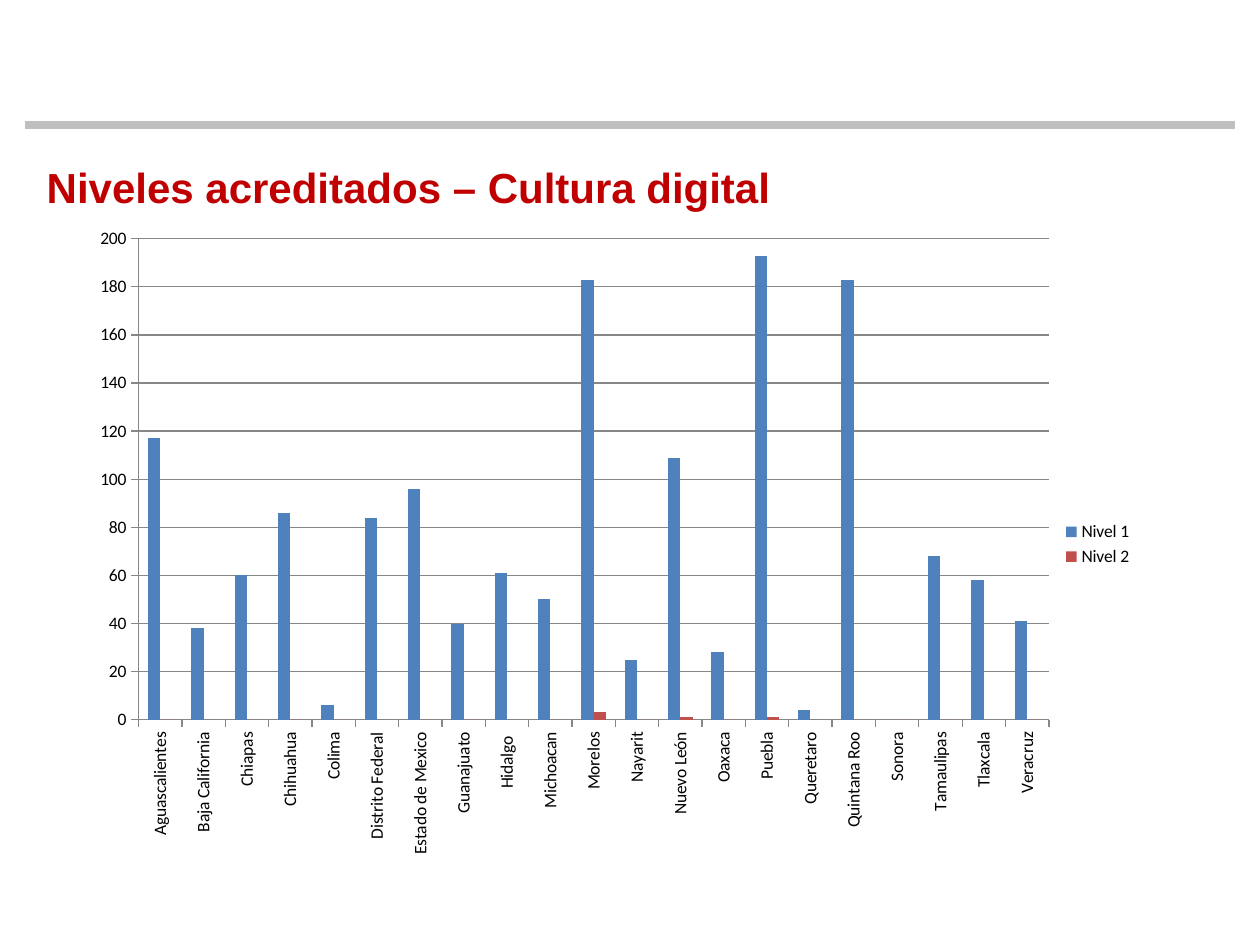
import pptx
import pptx.chart.data
import pptx.dml.color
import pptx.enum.chart
import pptx.enum.text
import pptx.oxml
import pptx.util
from pptx.oxml.ns import qn

Pt = pptx.util.Pt
RGBColor = pptx.dml.color.RGBColor

RED = RGBColor(0xC0, 0x00, 0x00)
RULE_GRAY = RGBColor(0xBF, 0xBF, 0xBF)
AXIS_GRAY = RGBColor(0x87, 0x87, 0x87)
BLACK = RGBColor(0x00, 0x00, 0x00)
LEVEL_COLORS = (RGBColor(0x4F, 0x81, 0xBD), RGBColor(0xC0, 0x50, 0x4D))

HEADING = "Niveles acreditados – Cultura digital"
LEVELS = ("Nivel 1", "Nivel 2")
STATES = [
    ("Aguascalientes", 117, 0),
    ("Baja California", 38, 0),
    ("Chiapas", 60, 0),
    ("Chihuahua", 86, 0),
    ("Colima", 6, 0),
    ("Distrito Federal", 84, 0),
    ("Estado de Mexico", 96, 0),
    ("Guanajuato", 40, 0),
    ("Hidalgo ", 61, 0),
    ("Michoacan", 50, 0),
    ("Morelos", 183, 3),
    ("Nayarit", 25, 0),
    ("Nuevo León", 109, 1),
    ("Oaxaca", 28, 0),
    ("Puebla", 193, 1),
    ("Queretaro", 4, 0),
    ("Quintana Roo", 183, 0),
    ("Sonora", 0, 0),
    ("Tamaulipas", 68, 0),
    ("Tlaxcala", 58, 0),
    ("Veracruz", 41, 0),
]
# Inner plot area as fractions of the chart frame
PLOT_AREA = {"x": 0.06, "y": 0.03, "w": 0.85, "h": 0.74}


def write(frame, text, *, size, color, font, bold=False):
    frame.text = text
    paragraph = frame.paragraphs[0]
    paragraph.alignment = pptx.enum.text.PP_ALIGN.LEFT
    run_font = paragraph.runs[0].font
    run_font.size, run_font.name, run_font.bold = Pt(size), font, bold
    run_font.color.rgb = color


def add_rule(slide):
    rule = slide.shapes.add_connector(
        pptx.enum.shapes.MSO_CONNECTOR.STRAIGHT, Pt(14.4), Pt(71.3), Pt(705.6), Pt(71.3))
    rule.line.color.rgb = RULE_GRAY
    rule.line.width = Pt(4.5)
    rule._element.spPr.append(pptx.oxml.parse_xml(
        '<a:effectLst xmlns:a="http://schemas.openxmlformats.org/drawingml/2006/main"/>'))


def fix_plot_area(chart):
    """Pin the inner plot area at the PLOT_AREA fractions."""
    plot_area = chart._chartSpace.chart.plotArea
    for automatic in plot_area.findall(qn("c:layout")):
        plot_area.remove(automatic)
    sizes = "".join(f'<c:{side} val="{share}"/>' for side, share in PLOT_AREA.items())
    plot_area.insert(0, pptx.oxml.parse_xml(
        '<c:layout xmlns:c="http://schemas.openxmlformats.org/drawingml/2006/chart">'
        '<c:manualLayout><c:layoutTarget val="inner"/><c:xMode val="edge"/>'
        f'<c:yMode val="edge"/>{sizes}</c:manualLayout></c:layout>'))


def add_levels_chart(slide):
    states, *level_values = zip(*STATES)
    data = pptx.chart.data.CategoryChartData()
    data.categories = states
    for level, values in zip(LEVELS, level_values):
        data.add_series(level, values)
    chart = slide.shapes.add_chart(
        pptx.enum.chart.XL_CHART_TYPE.COLUMN_CLUSTERED,
        Pt(42.5), Pt(125.3), Pt(612), Pt(371.5), data).chart
    chart.has_title = False
    chart.font.size, chart.font.name = Pt(10), "Calibri"
    chart.font.color.rgb = BLACK

    plot = chart.plots[0]
    plot.gap_width, plot.overlap, plot.vary_by_categories = 150, 0, False
    for series, color in zip(plot.series, LEVEL_COLORS):
        series.format.fill.solid()
        series.format.fill.fore_color.rgb = color

    state_axis, count_axis = chart.category_axis, chart.value_axis
    count_axis.minimum_scale, count_axis.maximum_scale = 0, 200
    count_axis.major_unit = 20
    count_axis.has_major_gridlines = True
    for axis in (state_axis, count_axis):
        axis.major_tick_mark = pptx.enum.chart.XL_TICK_MARK.OUTSIDE
    for lines in (state_axis, count_axis, count_axis.major_gridlines):
        lines.format.line.color.rgb = AXIS_GRAY
        lines.format.line.width = Pt(0.75)
    state_axis.tick_labels.font.size = Pt(10)
    label_body = state_axis._element.txPr.find(qn("a:bodyPr"))
    label_body.set("rot", "-5400000")
    label_body.set("vert", "horz")

    chart.has_legend = True
    chart.legend.position = pptx.enum.chart.XL_LEGEND_POSITION.RIGHT
    chart.legend.include_in_layout = False
    fix_plot_area(chart)


def main():
    deck = pptx.Presentation()
    deck.slide_width, deck.slide_height = Pt(720), Pt(540)
    slide = deck.slides.add_slide(deck.slide_layouts[5])
    add_rule(slide)
    add_levels_chart(slide)

    heading = slide.shapes.title
    heading.left, heading.top, heading.width, heading.height = (
        Pt(19.5), Pt(88.6), Pt(481.7), Pt(36.7))
    write(heading.text_frame, HEADING, size=24, color=RED, font="Arial", bold=True)
    heading.text_frame.vertical_anchor = pptx.enum.text.MSO_ANCHOR.MIDDLE
    deck.save("out.pptx")


if __name__ == "__main__":
    main()
